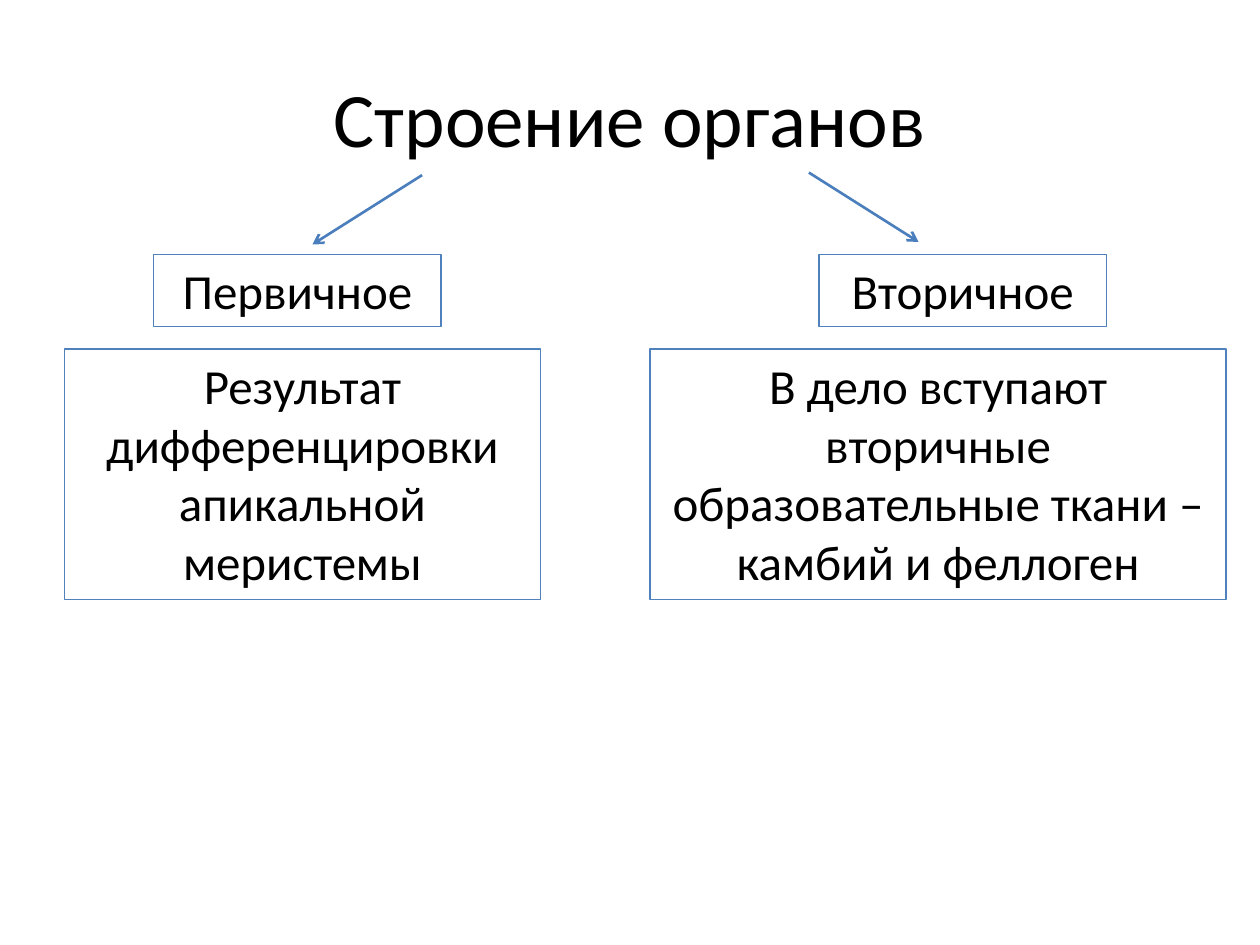
from dataclasses import dataclass
from typing import NamedTuple

from lxml.etree import SubElement
from pptx import Presentation
from pptx.dml.color import RGBColor
from pptx.enum.shapes import MSO_CONNECTOR, MSO_SHAPE
from pptx.enum.text import MSO_ANCHOR, PP_ALIGN
from pptx.oxml.ns import qn
from pptx.util import Inches, Pt


@dataclass(frozen=True)
class Theme:
    """Colours, font and sizes of the slide."""
    font: str = "Calibri"
    ink: RGBColor = RGBColor(0x00, 0x00, 0x00)
    border: RGBColor = RGBColor(0x4F, 0x81, 0xBD)
    arrow: RGBColor = RGBColor(0x4B, 0x7E, 0xBC)
    title_size: Pt = Pt(44)
    body_size: Pt = Pt(28)
    border_width: Pt = Pt(0.75)
    arrow_width: Pt = Pt(1.5)


class Box(NamedTuple):
    """A rectangle in grid columns and rows."""
    left: float
    top: float
    width: float
    height: float


THEME = Theme()
COLUMNS, ROWS = 100, 75
SLIDE_WIDTH, SLIDE_HEIGHT = Inches(10), Inches(7.5)
HEADING_WIDTH, HEADING_HEIGHT, HEADING_DROP = 22.8, 5.7, 6.4
DETAIL_DROP = 13.9
ARROW_RUN, ARROW_FALL = 8.7, 5.5


def to_emu(*grid):
    """Turn alternating columns and rows into slide lengths."""
    units = (SLIDE_WIDTH / COLUMNS, SLIDE_HEIGHT / ROWS)
    return [round(length * units[i % 2]) for i, length in enumerate(grid)]


def write(holder, wording, size):
    """Put centred text into a shape or text box."""
    frame = holder.text_frame
    frame.word_wrap = True
    frame.text = wording
    frame.vertical_anchor = MSO_ANCHOR.MIDDLE
    paragraph = frame.paragraphs[0]
    paragraph.alignment = PP_ALIGN.CENTER
    font = paragraph.runs[0].font
    font.name, font.size = THEME.font, size
    font.color.rgb = THEME.ink


def add_title(slide, box, wording):
    """Place the slide title."""
    write(slide.shapes.add_textbox(*to_emu(*box)), wording, THEME.title_size)


def add_panel(slide, box, wording):
    """Place an outlined panel with text."""
    panel = slide.shapes.add_shape(MSO_SHAPE.RECTANGLE, *to_emu(*box))
    panel.shadow.inherit = False
    panel.fill.background()
    panel.line.color.rgb = THEME.border
    panel.line.width = THEME.border_width
    write(panel, wording, THEME.body_size)
    panel.text_frame.vertical_anchor = MSO_ANCHOR.TOP


def add_arrow(slide, start_x, start_y, run):
    """Draw an arrow falling from the title to a branch."""
    ends = to_emu(start_x, start_y, start_x + run, start_y + ARROW_FALL)
    arrow = slide.shapes.add_connector(MSO_CONNECTOR.STRAIGHT, *ends)
    arrow.line.color.rgb = THEME.arrow
    arrow.line.width = THEME.arrow_width
    SubElement(arrow.line._get_or_add_ln(), qn("a:tailEnd"), type="arrow")
    SubElement(arrow._element.spPr, qn("a:effectLst"))


def add_branch(slide, box, heading, detail, heading_inset, arrow_inset, arrow_lift, arrow_run):
    """Place an arrow, a heading and a detail panel inside the box."""
    add_arrow(slide, box.left + arrow_inset, box.top + arrow_lift, arrow_run)
    add_panel(slide, Box(box.left + heading_inset, box.top + HEADING_DROP,
                         HEADING_WIDTH, HEADING_HEIGHT), heading)
    add_panel(slide, Box(box.left, box.top + DETAIL_DROP,
                         box.width, box.height - DETAIL_DROP), detail)


def main():
    """Build and save the slide."""
    deck = Presentation()
    deck.slide_width, deck.slide_height = SLIDE_WIDTH, SLIDE_HEIGHT
    slide = deck.slides.add_slide(deck.slide_layouts[6])
    add_title(slide, Box(5, 3, 90, 12.5), "Строение органов")
    add_branch(slide, Box(5.1, 13.8, 37.8, 33.8), "Первичное",
               "Результат дифференцировки апикальной меристемы",
               heading_inset=7.1, arrow_inset=28.4, arrow_lift=0.1, arrow_run=-ARROW_RUN)
    add_branch(slide, Box(51.6, 13.8, 45.7, 33.8), "Вторичное",
               "В дело вступают вторичные образовательные ткани – камбий и феллоген",
               heading_inset=13.4, arrow_inset=12.6, arrow_lift=-0.1, arrow_run=ARROW_RUN)
    deck.save("out.pptx")


if __name__ == "__main__":
    main()
